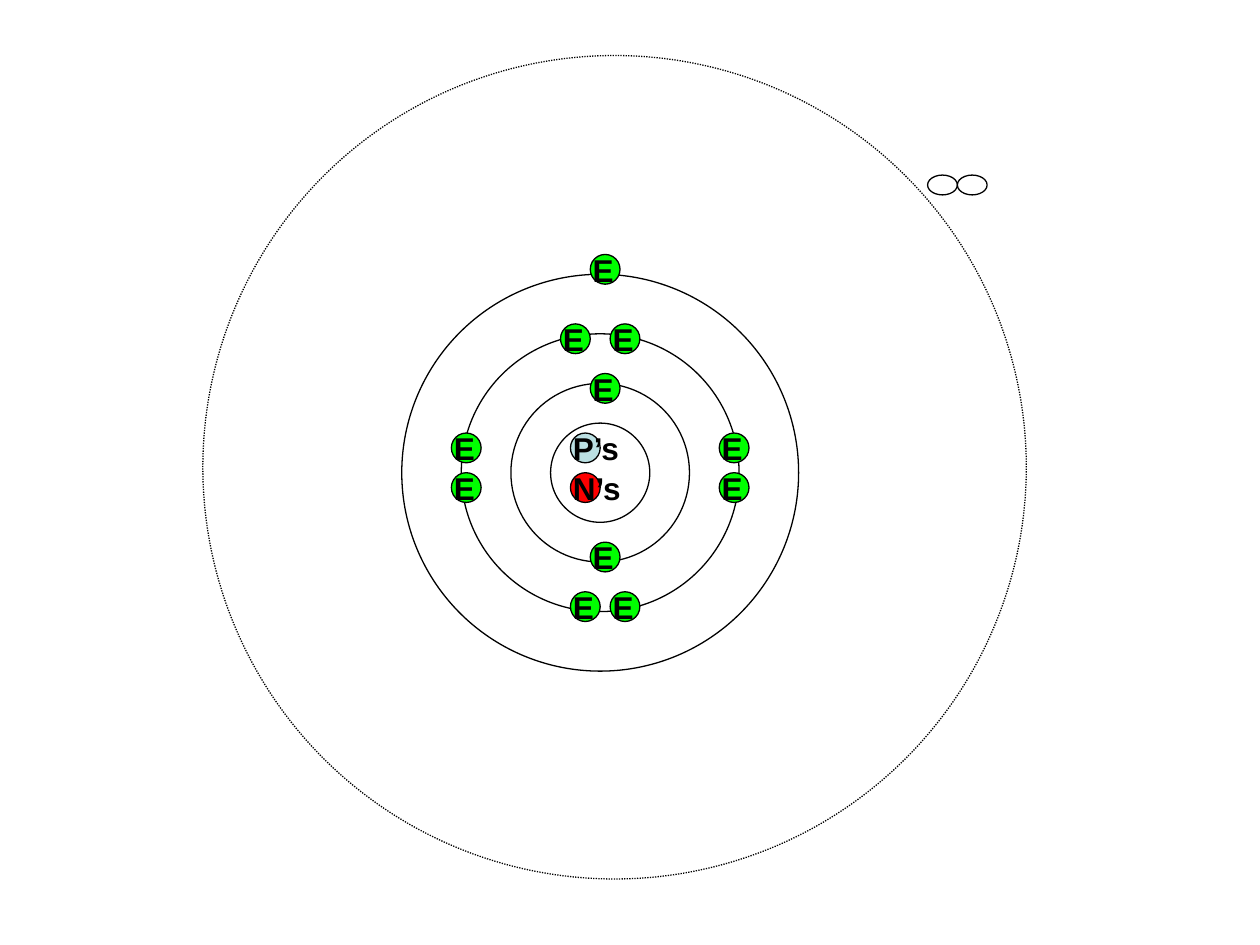
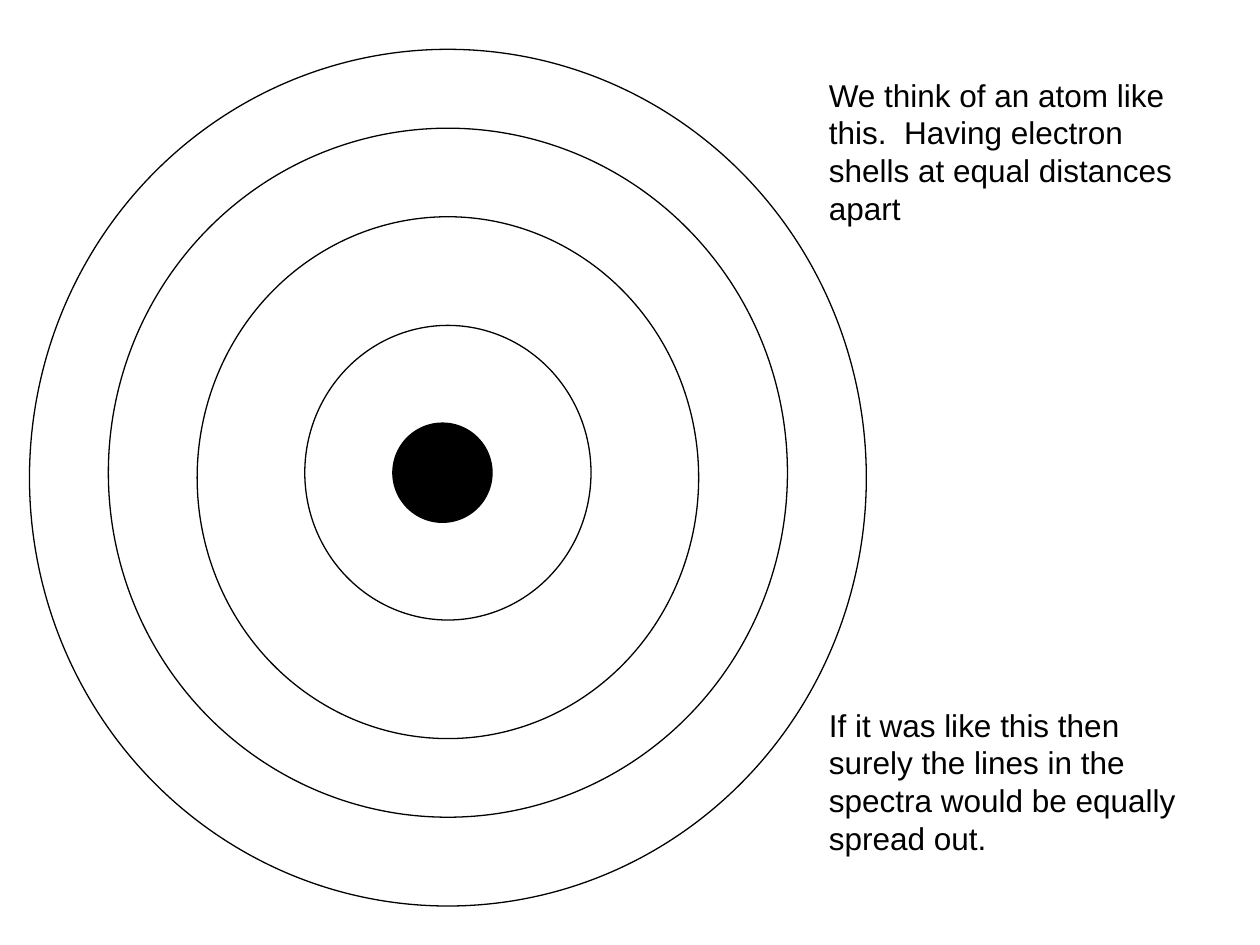
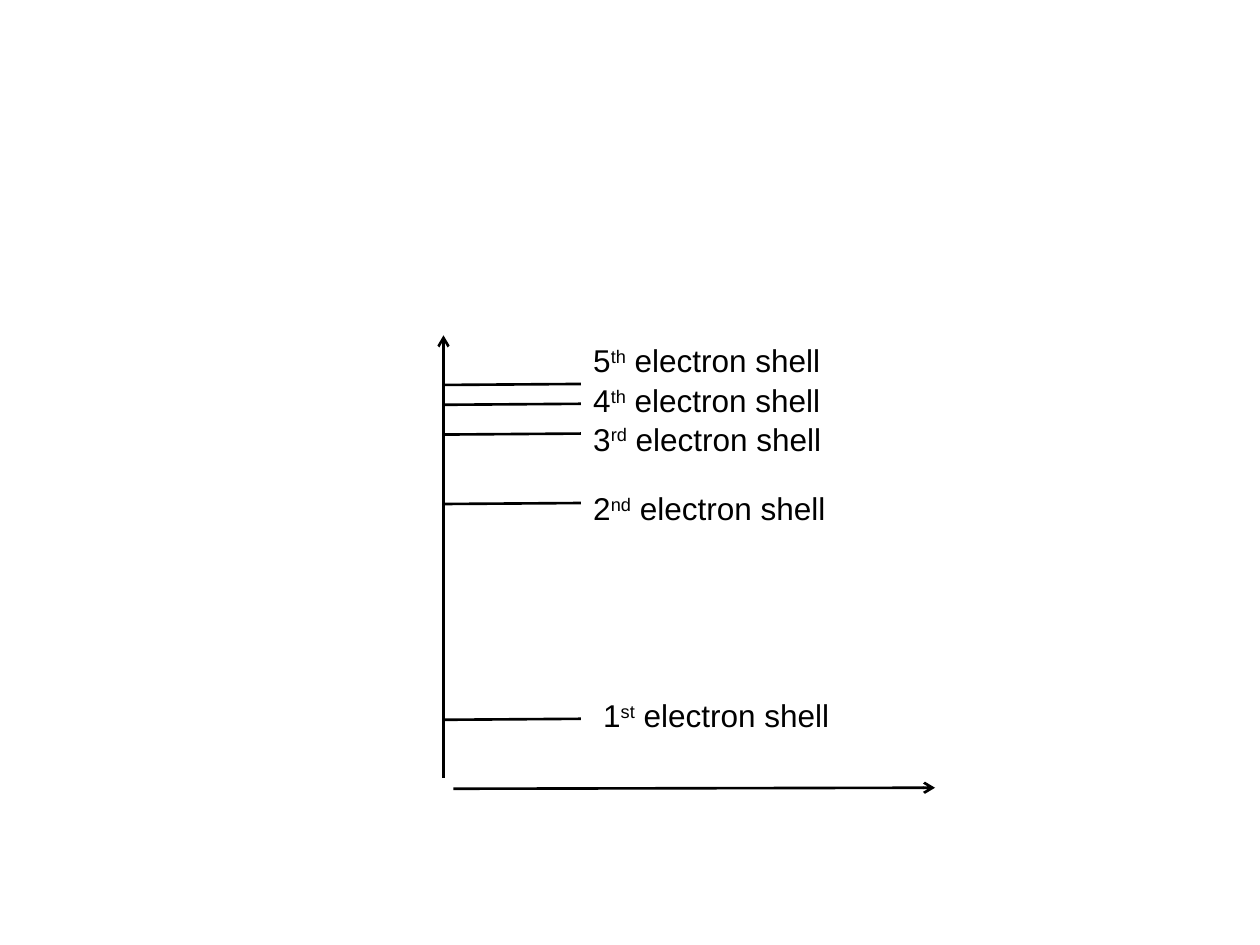
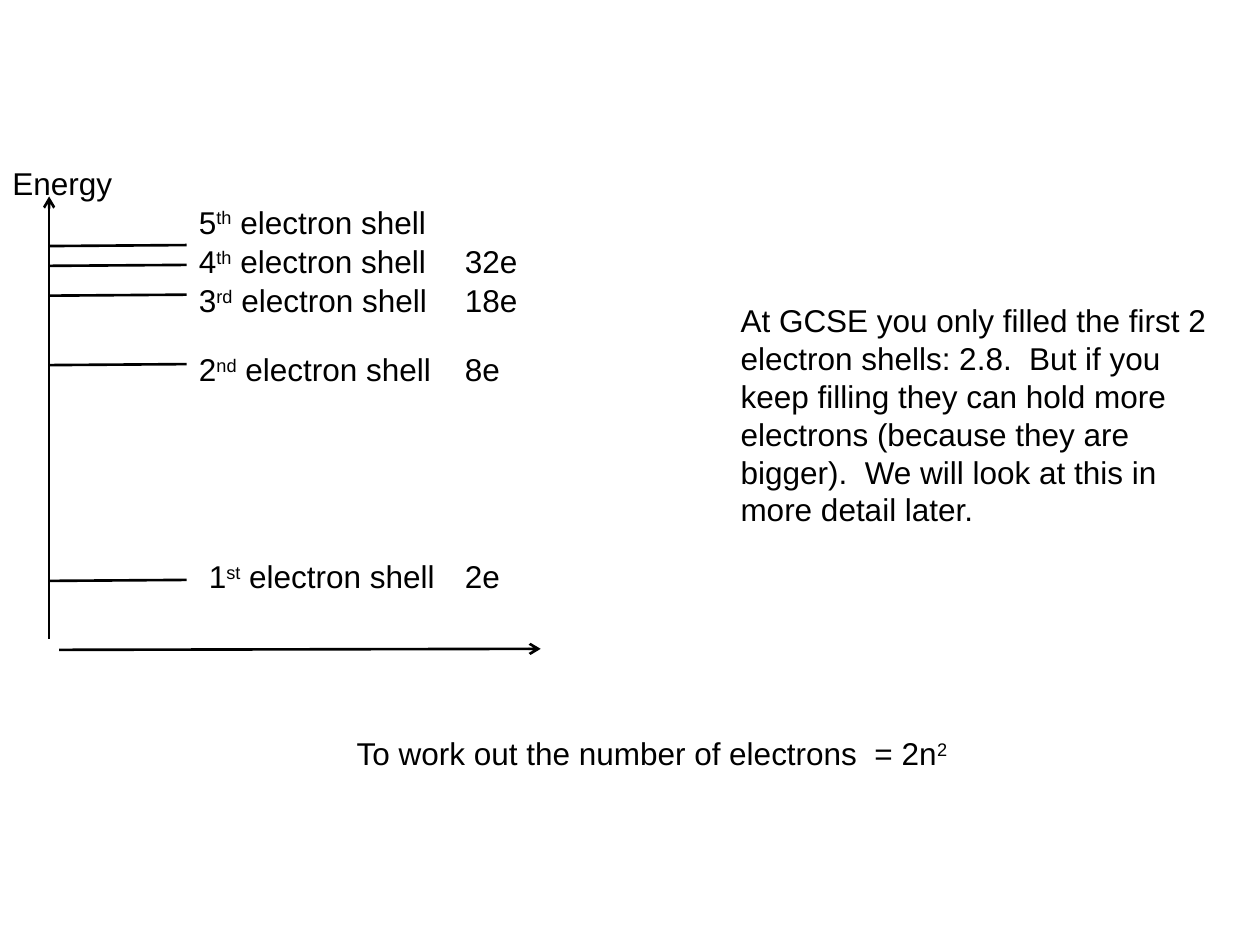
from lxml import etree
from pptx import Presentation
from pptx.dml.color import RGBColor
from pptx.enum.dml import MSO_LINE
from pptx.enum.shapes import MSO_CONNECTOR, MSO_SHAPE
from pptx.enum.text import MSO_AUTO_SIZE
from pptx.oxml.ns import qn
from pptx.util import Cm, Pt

OVAL = MSO_SHAPE.OVAL
STRAIGHT = MSO_CONNECTOR.STRAIGHT
DOTTED = MSO_LINE.ROUND_DOT
GROW = MSO_AUTO_SIZE.SHAPE_TO_FIT_TEXT

FONT, TEXT_SIZE = "Arial", 18
BLACK, GREEN, RED, PALE_BLUE = "000000", "00FF00", "FF0000", "BBE0E3"
LINE_HEIGHT = 1.02

ATOM_CENTRE = (12.1, 9.53)
ATOM_RINGS = [2, 3.6, 5.6, 8]
OUTER_RING = (12.39, 9.42, 16.6)
PARTICLE_SIZE = 0.6
NUCLEONS = [("P’s", PALE_BLUE, -0.3, -0.5), ("N’s", RED, -0.3, 0.3)]
ELECTRONS = [
    (0.1, -4.1),
    (-0.5, -2.7), (0.5, -2.7), (-0.3, 2.7), (0.5, 2.7),
    (-2.7, -0.5), (-2.7, 0.3), (2.7, -0.5), (2.7, 0.3),
    (0.1, -1.7), (0.1, 1.7),
]
MOLECULE = [(19, 3.73), (19.6, 3.73)]

EQUAL_NUCLEUS = (8.92, 9.53, 2)
EQUAL_SHELLS = [
    (9.03, 9.53, 5.77, 5.94),
    (9.03, 9.63, 10.11, 10.52),
    (9.03, 9.53, 13.69, 13.89),
    (9.03, 9.63, 16.87, 17.27),
]
EQUAL_NOTES = [
    (1.4, "We think of an atom like this.  Having electron shells at equal distances apart"),
    (14.1, "If it was like this then surely the lines in the spectra would be equally spread out."),
]

SHELL_LEVELS = [
    ("1^st^ electron shell", 7.75, 2.97, 7.15),
    ("2^nd^ electron shell", 3.4, 2.77, 2.98),
    ("3^rd^ electron shell", 2, 2.77, 1.58),
    ("4^th^ electron shell", 1.4, 2.77, 0.8),
    ("5^th^ electron shell", 1, 2.77, 0),
]
FILLED_SHELLS = 4
AXIS_HEIGHT = 8.92
BASE_AXIS = (0.2, 9.14, 9.91)
LEVEL_LENGTH = 2.77
LINE_RISE = 0.02
CENTRED_LEVELS = (8.94, 6.76)
FILLING_LEVELS = (0.99, 3.96)
COUNT_OFFSET = 8.13
FILLING_NOTES = [
    ("Energy", 0, 3.18, 2.97, LINE_HEIGHT),
    (
        "At GCSE you only filled the first 2 electron shells: 2.8.  But if you keep "
        "filling they can hold more electrons (because they are bigger).  We will look "
        "at this in more detail later.",
        14.68, 5.95, 9.93, 4.88,
    ),
    ("To work out the number of electrons  = 2n^2^", 6.94, 14.68, 13.1, LINE_HEIGHT),
]


def colour(value):
    return RGBColor.from_string(value)


def add_text(shapes, text, left, top, width, height=LINE_HEIGHT, bold=False):
    box = shapes.add_textbox(Cm(left), Cm(top), Cm(width), Cm(height))
    box.text_frame.word_wrap = True
    box.text_frame.auto_size = GROW
    para = box.text_frame.paragraphs[0]
    for position, piece in enumerate(text.split("^")):
        if not piece:
            continue
        span = para.add_run()
        span.text = piece
        span.font.name = FONT
        span.font.size = Pt(TEXT_SIZE)
        span.font.bold = bold
        span.font.color.rgb = colour(BLACK)
        if position % 2:
            span.font._element.set("baseline", "30000")


def add_ellipse(shapes, centre_x, centre_y, width, height=None, fill=None, dash=None):
    height = height or width
    ellipse = shapes.add_shape(
        OVAL, Cm(centre_x - width / 2), Cm(centre_y - height / 2), Cm(width), Cm(height)
    )
    ellipse.shadow.inherit = False
    if fill:
        ellipse.fill.solid()
        ellipse.fill.fore_color.rgb = colour(fill)
    else:
        ellipse.fill.background()
    ellipse.line.color.rgb = colour(BLACK)
    ellipse.line.width = Pt(0.75)
    if dash:
        ellipse.line.dash_style = dash


def add_line(shapes, start, end, arrow=False):
    line = shapes.add_connector(STRAIGHT, *(Cm(value) for value in (*start, *end)))
    line.line.color.rgb = colour(BLACK)
    line.line.width = Pt(1.5)
    if arrow:
        etree.SubElement(line.line._get_or_add_ln(), qn("a:tailEnd"), type="arrow")
    etree.SubElement(line._element.spPr, qn("a:effectLst"))


def add_particle(page, label, fill, offset_x, offset_y):
    x, y = ATOM_CENTRE[0] + offset_x, ATOM_CENTRE[1] + offset_y
    group = page.shapes.add_group_shape()
    add_ellipse(group.shapes, x, y, PARTICLE_SIZE, fill=fill)
    add_text(group.shapes, label, x - 0.5, y - 0.5, 1.8, bold=True)


def add_levels(page, origin):
    x, y = origin
    shapes = page.shapes.add_group_shape().shapes
    add_line(shapes, (x, y + AXIS_HEIGHT), (x, y), arrow=True)
    start, base, end = BASE_AXIS
    add_line(shapes, (x + start, y + base), (x + end, y + base - LINE_RISE), arrow=True)
    for label, level, label_left, label_top in SHELL_LEVELS:
        add_line(shapes, (x, y + level), (x + LEVEL_LENGTH, y + level - LINE_RISE))
        add_text(shapes, label, x + label_left, y + label_top, 6.15)


def build_atom(page):
    for diameter in ATOM_RINGS:
        add_ellipse(page.shapes, *ATOM_CENTRE, diameter)
    add_ellipse(page.shapes, *OUTER_RING, dash=DOTTED)
    for nucleon in NUCLEONS:
        add_particle(page, *nucleon)
    for offset in ELECTRONS:
        add_particle(page, "E", GREEN, *offset)
    molecule = page.shapes.add_group_shape()
    for centre in MOLECULE:
        add_ellipse(molecule.shapes, *centre, 0.6, 0.4)


def build_equal_shells(page):
    group = page.shapes.add_group_shape()
    add_ellipse(group.shapes, *EQUAL_NUCLEUS, fill=BLACK)
    for shell in EQUAL_SHELLS:
        add_ellipse(group.shapes, *shell)
    for top, note in EQUAL_NOTES:
        add_text(page.shapes, note, 16.46, top, 7.75, 3.33)


def build_levels(page):
    add_levels(page, CENTRED_LEVELS)


def build_filling(page):
    add_levels(page, FILLING_LEVELS)
    left, top = FILLING_LEVELS
    for number, shell in enumerate(SHELL_LEVELS[:FILLED_SHELLS], 1):
        add_text(page.shapes, f"{2 * number ** 2}e", left + COUNT_OFFSET, top + shell[3], 1.98)
    for note in FILLING_NOTES:
        add_text(page.shapes, *note)


def main():
    deck = Presentation()
    deck.slide_width, deck.slide_height = Cm(25.4), Cm(19.05)
    for build in (build_atom, build_equal_shells, build_levels, build_filling):
        build(deck.slides.add_slide(deck.slide_layouts[6]))
    deck.save("out.pptx")


if __name__ == "__main__":
    main()
